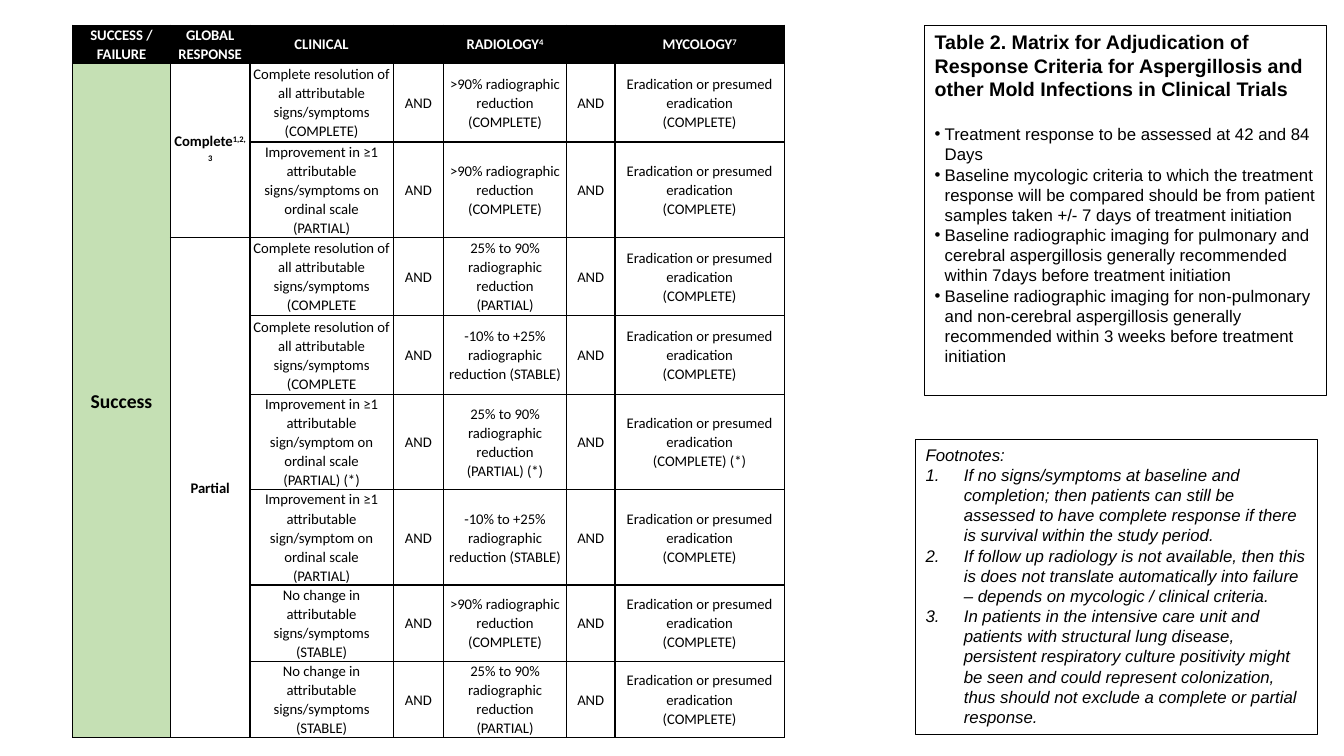
from dataclasses import dataclass

from lxml.etree import SubElement
from pptx import Presentation
from pptx.dml.color import RGBColor
from pptx.enum.text import MSO_ANCHOR, MSO_AUTO_SIZE, PP_ALIGN
from pptx.oxml.ns import qn
from pptx.util import Inches, Pt


@dataclass(frozen=True)
class Theme:
    """Colours, fonts and type sizes of the slide."""
    black: RGBColor = RGBColor(0x00, 0x00, 0x00)
    white: RGBColor = RGBColor(0xFF, 0xFF, 0xFF)
    green: RGBColor = RGBColor(0xC5, 0xE0, 0xB4)
    table_font: str = "Calibri"
    box_font: str = "Arial"
    cell_size: Pt = Pt(10.5)
    large_size: Pt = Pt(14)
    note_size: Pt = Pt(12)
    cell_border: Pt = Pt(1)
    box_border: Pt = Pt(0.75)


THEME = Theme()

COLUMN_WIDTHS = (0.97, 0.79, 1.42, 0.5, 1.22, 0.48, 1.68)
ROW_HEIGHTS = (0.36, 0.78, 0.78, 0.78, 0.78, 0.87, 0.78, 0.58, 0.58)
HEADERS = ("SUCCESS / FAILURE", "GLOBAL RESPONSE", "CLINICAL", "",
           "RADIOLOGY^4", "", "MYCOLOGY^7")

RESOLVED = "Complete resolution of all attributable signs/symptoms\n"
IMPROVED_SIGNS = "Improvement in ≥1 attributable signs/symptoms on ordinal scale\n"
IMPROVED_SIGN = "Improvement in ≥1 attributable sign/symptom on ordinal scale\n"
UNCHANGED = "No change in attributable signs/symptoms (STABLE)"
OVER_90 = ">90% radiographic reduction (COMPLETE)"
FROM_25_TO_90 = "25% to 90% radiographic reduction\n(PARTIAL)"
STABLE = "-10% to +25% radiographic reduction (STABLE)"
ERADICATED = "Eradication or presumed eradication\n(COMPLETE)"

CRITERIA = (
    (RESOLVED + "(COMPLETE)", OVER_90, ERADICATED),
    (IMPROVED_SIGNS + "(PARTIAL)", OVER_90, ERADICATED),
    (RESOLVED + "(COMPLETE", FROM_25_TO_90, ERADICATED),
    (RESOLVED + "(COMPLETE", STABLE, ERADICATED),
    (IMPROVED_SIGN + "(PARTIAL) (*)", FROM_25_TO_90 + " (*)", ERADICATED + " (*)"),
    (IMPROVED_SIGN + "(PARTIAL)", STABLE, ERADICATED),
    (UNCHANGED, OVER_90, ERADICATED),
    (UNCHANGED, FROM_25_TO_90, ERADICATED),
)

TITLE = ("Table 2. Matrix for Adjudication of Response Criteria for "
         "Aspergillosis and other Mold Infections in Clinical Trials")
ASSESSMENT_RULES = (
    "Treatment response to be assessed at 42 and 84 Days",
    "Baseline mycologic criteria to which the treatment response will be compared "
    "should be from patient samples taken +/- 7 days of treatment initiation",
    "Baseline radiographic imaging for pulmonary and cerebral aspergillosis "
    "generally recommended within 7days before treatment initiation",
    "Baseline radiographic imaging for non-pulmonary and non-cerebral aspergillosis "
    "generally recommended within 3 weeks before treatment initiation",
)
FOOTNOTES = (
    "If no signs/symptoms at baseline and completion; then patients can still be "
    "assessed to have complete response if there is survival within the study period.",
    "If follow up radiology is not available, then this is does not translate "
    "automatically into failure – depends on mycologic / clinical criteria.",
    "In patients in the intensive care unit and patients with structural lung disease, "
    "persistent respiratory culture positivity might be seen and could represent "
    "colonization, thus should not exclude a complete or partial response.",
)


def set_attributes(target, values):
    """Set each named attribute of the target."""
    for name, value in values.items():
        setattr(target, name, value)


def add_run(paragraph, text, color, values):
    """Add a formatted run to the paragraph and return it."""
    run = paragraph.add_run()
    run.text = text
    set_attributes(run.font, values)
    run.font.color.rgb = color
    return run


def add_borders(cell):
    """Draw a solid line on all four sides of the cell."""
    properties = cell._tc.get_or_add_tcPr()
    for side in ("a:lnL", "a:lnR", "a:lnT", "a:lnB"):
        line = SubElement(properties, qn(side), w=str(THEME.cell_border))
        fill = SubElement(line, qn("a:solidFill"))
        SubElement(fill, qn("a:srgbClr"), val=str(THEME.black))


def fill_cell(cell, text, fill=THEME.white, color=THEME.black, bold=False,
              size=THEME.cell_size):
    """Write centred lines into a cell, raising what follows a caret."""
    add_borders(cell)
    cell.fill.solid()
    cell.fill.fore_color.rgb = fill
    set_attributes(cell, {
        "vertical_anchor": MSO_ANCHOR.MIDDLE,
        "margin_left": Inches(0.03), "margin_right": Inches(0.03),
        "margin_top": 0, "margin_bottom": 0,
    })
    font = {"name": THEME.table_font, "size": size, "bold": bold}
    for index, line in enumerate(text.split("\n") if text else ()):
        frame = cell.text_frame
        paragraph = frame.add_paragraph() if index else frame.paragraphs[0]
        set_attributes(paragraph, {"alignment": PP_ALIGN.CENTER, "line_spacing": 1.07})
        base, _, superscript = line.partition("^")
        add_run(paragraph, base, color, font)
        if superscript:
            run = add_run(paragraph, superscript, color, font)
            run._r.get_or_add_rPr().set("baseline", "30000")


def add_matrix(slide):
    """Add the table of response criteria."""
    frame = slide.shapes.add_table(
        len(ROW_HEIGHTS), len(COLUMN_WIDTHS),
        Inches(0.72), Inches(0.25), Inches(7.06), Inches(6.96))
    table = frame.table
    set_attributes(table, {"first_row": False, "horz_banding": False})
    for column, width in zip(table.columns, COLUMN_WIDTHS):
        column.width = Inches(width)
    for row, height in zip(table.rows, ROW_HEIGHTS):
        row.height = Inches(height)
    frame.height = Inches(6.96)

    for column, header in enumerate(HEADERS):
        fill_cell(table.cell(0, column), header, THEME.black, THEME.white, bold=True)
    for row, (clinical, radiology, mycology) in enumerate(CRITERIA, 1):
        texts = (clinical, "AND", radiology, "AND", mycology)
        for column, text in enumerate(texts, 2):
            fill_cell(table.cell(row, column), text)

    groups = (
        (1, 8, 0, "Success", THEME.green, THEME.large_size),
        (1, 2, 1, "Complete^1,2,3", THEME.white, THEME.cell_size),
        (3, 8, 1, "Partial", THEME.white, THEME.cell_size),
    )
    for first, last, column, text, fill, size in groups:
        table.cell(first, column).merge(table.cell(last, column))
        for row in range(first, last + 1):
            fill_cell(table.cell(row, column), text if row == first else "",
                      fill, bold=True, size=size)


def set_bullet(paragraph, tag, values, indent):
    """Give the paragraph a bullet element and a hanging indent."""
    properties = paragraph._p.get_or_add_pPr()
    properties.set("marL", str(Inches(indent)))
    properties.set("indent", str(-Inches(indent)))
    SubElement(properties, qn(tag), values)


def place_text(placeholder, box, top_margin=0.05):
    """Move a placeholder and set how its text sits."""
    sides = ("left", "top", "width", "height")
    set_attributes(placeholder, dict(zip(sides, map(Inches, box))))
    set_attributes(placeholder.text_frame, {
        "word_wrap": True, "auto_size": MSO_AUTO_SIZE.NONE,
        "vertical_anchor": MSO_ANCHOR.TOP,
        "margin_left": Inches(0.1), "margin_right": Inches(0.1),
        "margin_top": Inches(top_margin), "margin_bottom": Inches(0.05),
    })


def write_paragraphs(placeholder, items, font):
    """Write paragraphs, each with its bullet element and indent."""
    frame = placeholder.text_frame
    for index, (text, tag, values, indent) in enumerate(items):
        paragraph = frame.add_paragraph() if index else frame.paragraphs[0]
        set_attributes(paragraph, {"alignment": PP_ALIGN.LEFT, "space_before": Pt(0)})
        set_bullet(paragraph, tag, values, indent)
        add_run(paragraph, text, THEME.black, {"name": THEME.box_font, **font})


def outline(shape):
    """Draw a thin black outline around the shape."""
    shape.line.color.rgb = THEME.black
    shape.line.width = THEME.box_border


def main():
    """Build the slide and save it."""
    presentation = Presentation()
    set_attributes(presentation, {"slide_width": Inches(13.33),
                                  "slide_height": Inches(7.5)})
    slide = presentation.slides.add_slide(presentation.slide_layouts[3])
    title, rules, footnotes = slide.placeholders
    add_matrix(slide)

    place_text(title, (9.17, 0.25, 3.99, 0.85))
    write_paragraphs(title, [(TITLE, "a:buNone", {}, 0)],
                     {"size": THEME.large_size, "bold": True})

    place_text(rules, (9.17, 0.25, 3.99, 3.67), top_margin=0.98)
    write_paragraphs(
        rules, [(rule, "a:buChar", {"char": "•"}, 0.1) for rule in ASSESSMENT_RULES],
        {"size": THEME.note_size, "bold": False})
    outline(rules)

    place_text(footnotes, (9.08, 4.36, 3.99, 2.93))
    numbered = [(note, "a:buAutoNum", {"type": "arabicPeriod"}, 0.38)
                for note in FOOTNOTES]
    write_paragraphs(footnotes, [("Footnotes:", "a:buNone", {}, 0), *numbered],
                     {"size": THEME.note_size, "italic": True})
    outline(footnotes)
    presentation.save("out.pptx")


if __name__ == "__main__":
    main()
